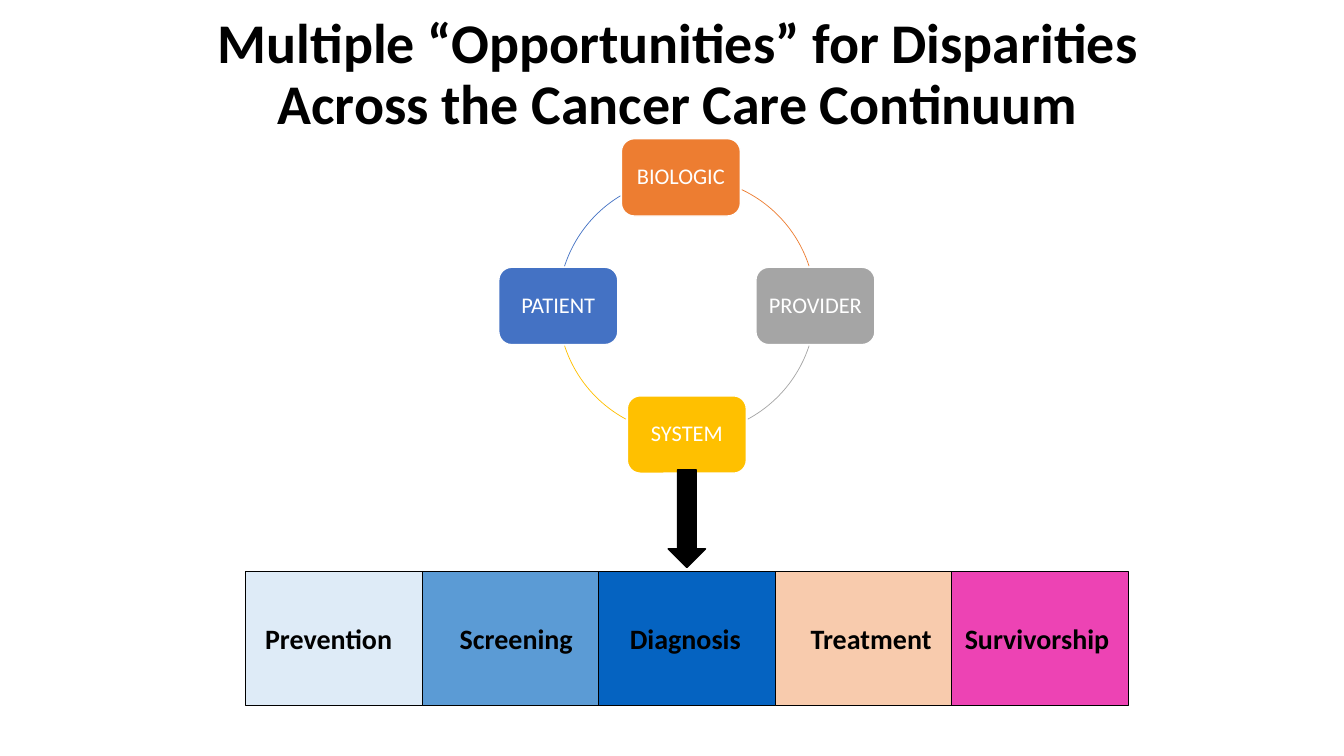
from collections import namedtuple
from dataclasses import dataclass
from math import cos, radians, sin

from pptx import Presentation
from pptx.dml.color import RGBColor
from pptx.enum.shapes import MSO_SHAPE
from pptx.enum.text import MSO_ANCHOR, PP_ALIGN
from pptx.util import Cm, Pt

RECTANGLE = MSO_SHAPE.RECTANGLE
ROUNDED_RECTANGLE = MSO_SHAPE.ROUNDED_RECTANGLE
ARC = MSO_SHAPE.ARC
DOWN_ARROW = MSO_SHAPE.DOWN_ARROW
MIDDLE = MSO_ANCHOR.MIDDLE
LEFT, CENTER = PP_ALIGN.LEFT, PP_ALIGN.CENTER
TITLE_ONLY = 5

Box = namedtuple("Box", "left top width height")


@dataclass(frozen=True)
class Theme:
    font: str = "Calibri"
    black: str = "000000"
    white: str = "FFFFFF"
    orange: str = "ED7D31"
    gray: str = "A5A5A5"
    gold: str = "FFC000"
    blue: str = "4472C4"
    pale_blue: str = "DEEBF7"
    sky_blue: str = "5B9BD5"
    deep_blue: str = "0563C1"
    peach: str = "F8CBAD"
    pink: str = "ED43B4"
    title_size: int = 40
    stage_size: int = 20
    factor_size: int = 16


THEME = Theme()

# Name, colour, angle on the ring, sideways shift, start and end of the arc that follows
FACTORS = [
    ("BIOLOGIC", THEME.orange, 270, -0.15, 295.3, 342),
    ("PROVIDER", THEME.gray, 0, 0, 18, 61.7),
    ("SYSTEM", THEME.gold, 90, 0, 118.3, 162),
    ("PATIENT", THEME.blue, 180, 0, 198, 238.9),
]
# Name, colour, left inset of the label
STAGES = [
    ("Prevention", THEME.pale_blue, 0.48),
    ("Screening", THEME.sky_blue, 0.94),
    ("Diagnosis", THEME.deep_blue, 0.78),
    ("Treatment", THEME.peach, 0.89),
    ("Survivorship", THEME.pink, 0.33),
]


def write_text(shape, *lines, size, color=THEME.black, bold=False,
               align=CENTER, left_inset=0.18, right_inset=0.18, spacing=0.9):
    """Write the lines as one paragraph, separated by line breaks."""
    frame = shape.text_frame
    frame.word_wrap = True
    frame.vertical_anchor = MIDDLE
    frame.margin_left, frame.margin_right = Cm(left_inset), Cm(right_inset)
    paragraph = frame.paragraphs[0]
    paragraph.alignment = align
    paragraph.line_spacing = spacing
    for index, line in enumerate(lines):
        if index:
            paragraph.add_line_break()
        run = paragraph.add_run()
        run.text = line
        run.font.name = THEME.font
        run.font.size = Pt(size)
        run.font.bold = bold
        run.font.color.rgb = RGBColor.from_string(color)


def add_box(slide, kind, box, *, fill=None, line, line_width):
    shape = slide.shapes.add_shape(kind, *(Cm(length) for length in box))
    shape.shadow.inherit = False
    if fill:
        shape.fill.solid()
        shape.fill.fore_color.rgb = RGBColor.from_string(fill)
    else:
        shape.fill.background()
    shape.line.color.rgb = RGBColor.from_string(line)
    shape.line.width = Pt(line_width)
    return shape


def place_title(slide, box):
    title = slide.shapes.title
    title.left, title.top, title.width, title.height = (Cm(length) for length in box)
    write_text(title, "Multiple “Opportunities” for Disparities",
               "Across the Cancer Care Continuum", size=THEME.title_size, bold=True)


def add_factor_ring(slide, box, node_width=3, node_height=1.95):
    """Place the factors around the circle that fills the box."""
    radius = box.width / 2
    center_x, center_y = box.left + radius, box.top + radius
    for name, color, angle, shift, arc_start, arc_end in FACTORS:
        x = center_x + radius * cos(radians(angle)) + shift
        y = center_y + radius * sin(radians(angle))
        node_box = Box(x - node_width / 2, y - node_height / 2, node_width, node_height)
        node = add_box(slide, ROUNDED_RECTANGLE, node_box,
                       fill=color, line=THEME.white, line_width=1)
        write_text(node, name, size=THEME.factor_size, color=THEME.white)
        arc = add_box(slide, ARC, box, line=color, line_width=0.5)
        # Arc adjustments count 0.6 per degree
        arc.adjustments[0] = arc_start * 0.6
        arc.adjustments[1] = arc_end * 0.6


def add_continuum(slide, box):
    stage_width = box.width / len(STAGES)
    for index, (name, color, inset) in enumerate(STAGES):
        stage_box = Box(box.left + index * stage_width, box.top, stage_width, box.height)
        stage = add_box(slide, RECTANGLE, stage_box,
                        fill=color, line=THEME.black, line_width=0.75)
        write_text(stage, name, size=THEME.stage_size, bold=True, align=LEFT,
                   left_inset=inset, right_inset=0, spacing=1)


def main():
    presentation = Presentation()
    presentation.slide_width, presentation.slide_height = Cm(33.87), Cm(19.05)
    slide = presentation.slides.add_slide(presentation.slide_layouts[TITLE_ONLY])
    place_title(slide, Box(5.13, 0.43, 23.9, 2.97))
    add_continuum(slide, Box(6.2, 14.4, 22.23, 3.38))
    add_factor_ring(slide, Box(14.07, 4.47, 6.48, 6.48))
    add_box(slide, DOWN_ARROW, Box(16.84, 11.84, 0.94, 2.46),
            fill=THEME.black, line=THEME.black, line_width=1)
    presentation.save("out.pptx")


if __name__ == "__main__":
    main()
